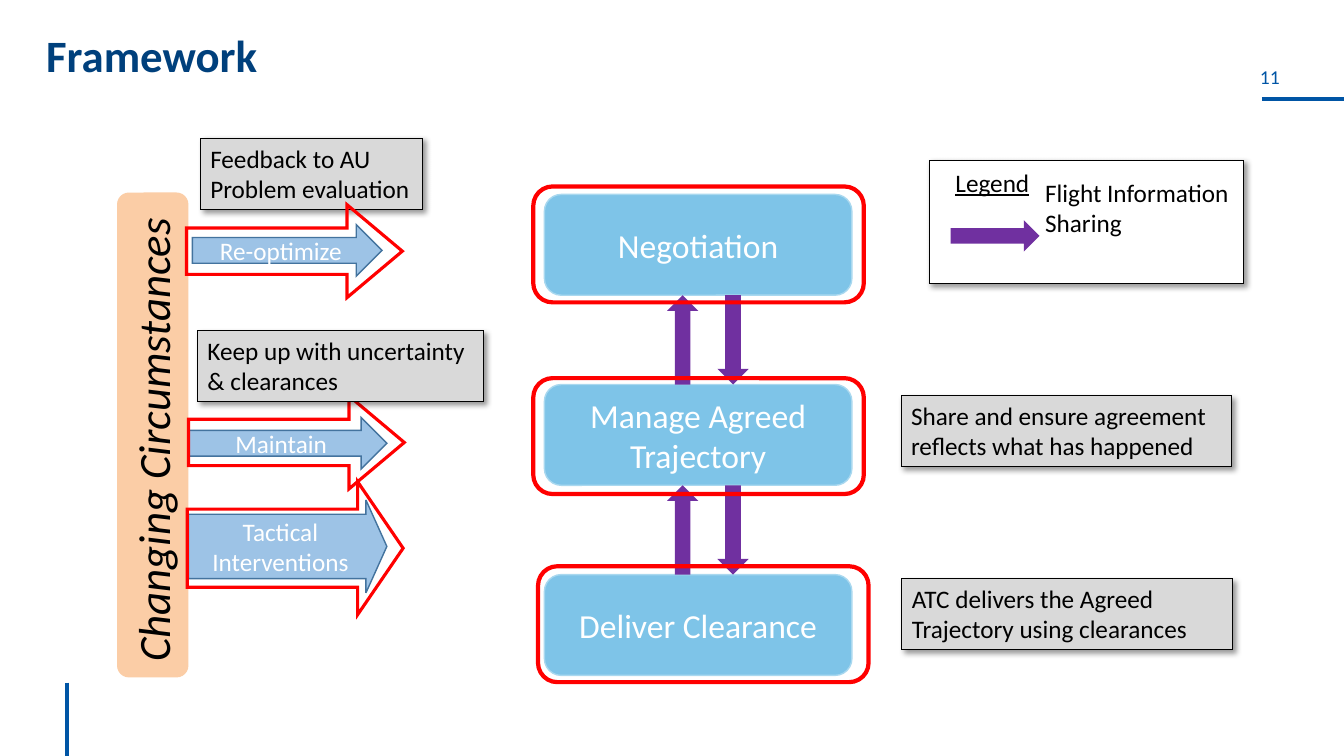
import pptx
import pptx.dml.color
import pptx.enum.shapes
import pptx.enum.text
import pptx.oxml
import pptx.oxml.ns
import pptx.util
from lxml import etree

Cm = pptx.util.Cm
Pt = pptx.util.Pt
RGB = pptx.dml.color.RGBColor.from_string
KIND = pptx.enum.shapes.MSO_SHAPE
ALIGN = pptx.enum.text.PP_ALIGN
ANCHOR = pptx.enum.text.MSO_ANCHOR
qn = pptx.oxml.ns.qn

THEME = {
    "title": {"color": "00407C", "font": {"size": Pt(32), "bold": True}},
    "number": {"color": "0055A5", "font": {"size": Pt(14)}, "align": ALIGN.CENTER},
    "rule": {"line": ("0055A5", 3)},
    "driver": {"fill": "FBCDA6", "color": "000000", "align": ALIGN.CENTER,
               "font": {"size": Pt(32), "italic": True}},
    "response": {"fill": "9DC3E6", "line": ("43739E", 1), "color": "FFFFFF",
                 "font": {"size": Pt(18)}, "align": ALIGN.CENTER, "anchor": ANCHOR.MIDDLE},
    "stage": {"fill": "7EC4E8", "line": ("A9D8EF", 1), "color": "FFFFFF",
              "font": {"size": Pt(24)}, "align": ALIGN.CENTER, "anchor": ANCHOR.MIDDLE},
    "flow": {"fill": "7030A0"},
    "frame": {"line": ("FF0000", 3)},
    "highlight": {"line": ("FF0000", 2.25)},
    "note": {"fill": "D9D9D9", "line": ("000000", 0.75), "color": "000000",
             "font": {"size": Pt(18)}, "shadow": True},
    "legend": {"fill": "FFFFFF", "line": ("000000", 1), "shadow": True},
    "label": {"color": "000000", "font": {"size": Pt(18)}},
    "heading": {"color": "000000", "font": {"size": Pt(18), "underline": True}},
}
SHADOW = (
    '<a:effectLst xmlns:a="http://schemas.openxmlformats.org/drawingml/2006/main">'
    '<a:outerShdw blurRad="50800" dist="38100" dir="2700000" algn="tl" rotWithShape="0">'
    '<a:srgbClr val="000000"><a:alpha val="40000"/></a:srgbClr></a:outerShdw></a:effectLst>'
)


def write(holder, text, role, wrap=True):
    style = THEME[role]
    frame = holder.text_frame
    frame.word_wrap = wrap
    frame.vertical_anchor = style.get("anchor", ANCHOR.TOP)
    frame.text = text
    for paragraph in frame.paragraphs:
        paragraph.alignment = style.get("align", ALIGN.LEFT)
        for run in paragraph.runs:
            run.font.name = "Calibri"
            run.font.color.rgb = RGB(style["color"])
            for attribute, value in style["font"].items():
                setattr(run.font, attribute, value)


def draw(kind, box, role, text="", wrap=True, adjustments=()):
    style = THEME[role]
    shape = slide.shapes.add_shape(kind, *map(Cm, box))
    shape.shadow.inherit = False
    if "shadow" in style:
        properties = shape._element.spPr
        properties.remove(properties.find(qn("a:effectLst")))
        properties.append(pptx.oxml.parse_xml(SHADOW))
    if "fill" in style:
        shape.fill.solid()
        shape.fill.fore_color.rgb = RGB(style["fill"])
    else:
        shape.fill.background()
    if "line" in style:
        color, width = style["line"]
        shape.line.color.rgb = RGB(color)
        shape.line.width = Pt(width)
        etree.SubElement(shape.line._ln, qn("a:miter")).set("lim", "800000")
    else:
        shape.line.fill.background()
    for index, value in enumerate(adjustments):
        shape.adjustments[index] = value
    if text:
        write(shape, text, role, wrap)
    return shape


deck = pptx.Presentation()
deck.slide_width, deck.slide_height = Cm(33.87), Cm(19.05)
slide = deck.slides.add_slide(deck.slide_layouts[5])

for ends in [(31.8, 2.49, 33.87, 2.49), (1.68, 17.2, 1.68, 19.05)]:
    rule = slide.shapes.add_connector(pptx.enum.shapes.MSO_CONNECTOR.STRAIGHT, *map(Cm, ends))
    color, width = THEME["rule"]["line"]
    rule.line.color.rgb = RGB(color)
    rule.line.width = Pt(width)
    etree.SubElement(rule._element.spPr, qn("a:effectLst"))

title = slide.shapes.title
title.left, title.top, title.width, title.height = map(Cm, (0.91, 0.79, 6.88, 1.35))
write(title, "Framework", "title")
title.text_frame.vertical_anchor = ANCHOR.MIDDLE
title.text_frame.paragraphs[0].line_spacing = 0.9

number = slide.shapes.add_textbox(*map(Cm, (30.48, 1.63, 3.05, 0.84)))
write(number, "11", "number", wrap=False)
for side in ("left", "top", "right", "bottom"):
    setattr(number.text_frame, f"margin_{side}", 0)

driver = draw(KIND.ROUNDED_RECTANGLE, (-2.26, 10.06, 12.22, 1.8), "driver",
              "Changing Circumstances ", wrap=False)
driver.rotation = 270

for text, box, adjustments in [
    ("Re-optimize", (4.85, 5.66, 4.78, 1.3), ()),
    ("Tactical Interventions", (4.75, 12.6, 5, 2.34), (0.694, 0.225)),
    ("Maintain", (4.75, 10.52, 5, 1.3), ()),
]:
    draw(KIND.RIGHT_ARROW, box, "response", text, adjustments=adjustments)

stage_top, stage_step, stage_height = 4.9, 4.79, 2.54
for row, text in enumerate(["Negotiation", "Manage Agreed Trajectory", "Deliver Clearance"]):
    draw(KIND.ROUNDED_RECTANGLE, (13.72, stage_top + row * stage_step, 7.75, stage_height),
         "stage", text)

for row in range(2):
    gap_top = stage_top + row * stage_step + stage_height
    for kind, left in [(KIND.DOWN_ARROW, 18.08), (KIND.UP_ARROW, 16.81)]:
        draw(kind, (left, gap_top, 0.79, stage_step - stage_height), "flow")

for left, top in [(13.44, 4.7), (13.44, 9.53), (13.56, 14.27)]:
    draw(KIND.ROUNDED_RECTANGLE, (left, top, 8.33, 2.92), "frame")

draw(KIND.RECTANGLE, (5.05, 3.48, 5.59, 1.8), "note",
     "Feedback to AU\nProblem evaluation", wrap=False)

for box, adjustments in [
    ((4.7, 5.16, 5.44, 2.34), (0.5, 0.595)),
    ((4.75, 9.98, 5.44, 2.34), (0.5, 0.595)),
    ((4.72, 12.14, 5.44, 3.35), (0.587, 0.342)),
]:
    draw(KIND.RIGHT_ARROW, box, "highlight", adjustments=adjustments)

for text, left, top, width in [
    ("Keep up with uncertainty & clearances", 4.98, 8.33, 7.21),
    ("Share and ensure agreement reflects what has happened", 22.71, 9.96, 8.33),
    ("ATC delivers the Agreed Trajectory using clearances", 22.73, 14.58, 8.33),
]:
    draw(KIND.RECTANGLE, (left, top, width, 1.8), "note", text)

draw(KIND.RECTANGLE, (23.42, 4.04, 7.92, 3.1), "legend")
draw(KIND.RIGHT_ARROW, (23.96, 5.55, 2.24, 0.79), "flow")
for text, box, role, wrap in [
    ("Flight Information Sharing", (26.09, 4.34, 5.16, 1.8), "label", True),
    ("Legend", (23.83, 4.09, 2.39, 1.02), "heading", False),
]:
    write(slide.shapes.add_textbox(*map(Cm, box)), text, role, wrap)

deck.save("out.pptx")
